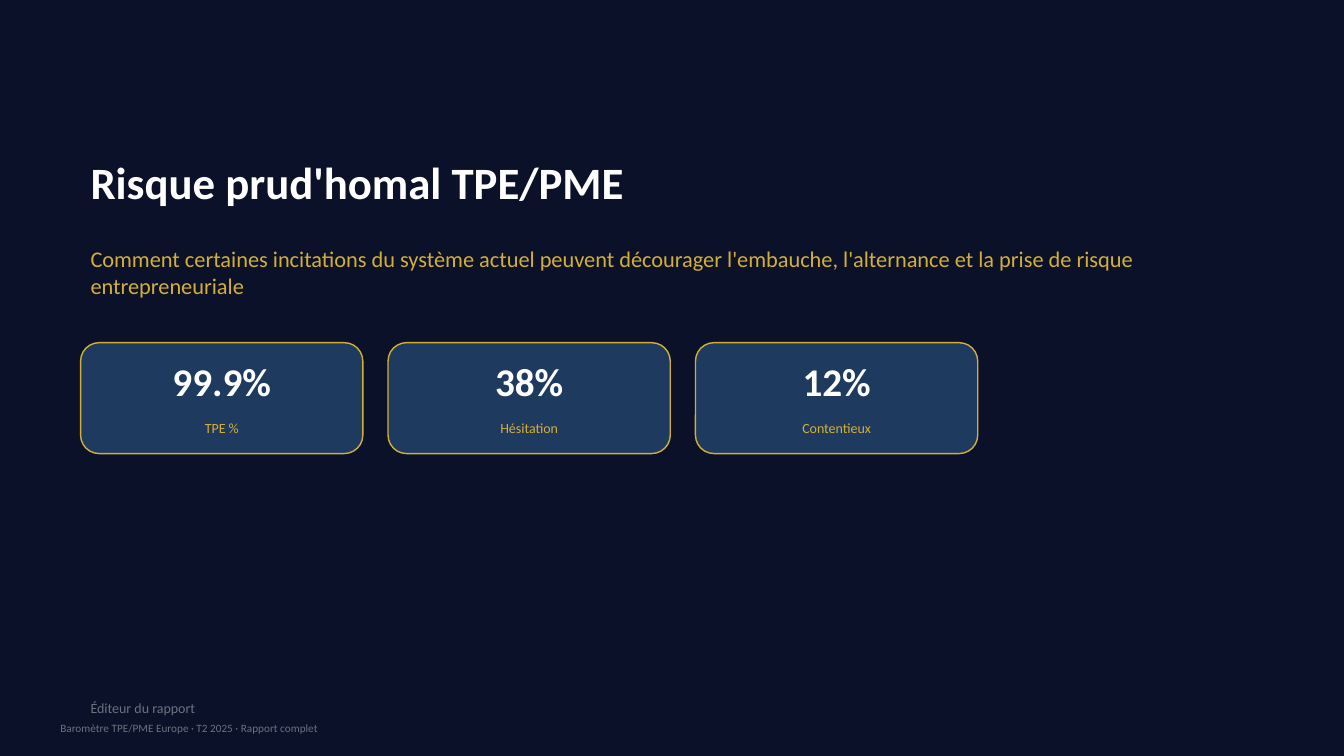
from dataclasses import dataclass

from pptx import Presentation
from pptx import util as u
from pptx.dml.color import RGBColor
from pptx.enum import shapes, text


@dataclass(frozen=True)
class Theme:
    font: str = "Calibri"
    background: str = "0A1128"
    card: str = "1E3A5F"
    gold: str = "D4AF37"
    white: str = "FFFFFF"
    grey: str = "6B7280"
    title: int = 32
    figure: int = 28
    subtitle: int = 16
    label: int = 10
    footer: int = 8


def set_attributes(target, values):
    for name, value in values.items():
        setattr(target, name, value)


class SlideBuilder:
    def __init__(self, presentation, theme):
        self.theme = theme
        self.slide = presentation.slides.add_slide(presentation.slide_layouts[6])
        fill = self.slide.background.fill
        fill.solid()
        fill.fore_color.rgb = RGBColor.from_string(theme.background)

    def add_text(self, box, words, size, color, bold=False, align=text.PP_ALIGN.LEFT):
        frame = self.slide.shapes.add_textbox(*map(u.Pt, box)).text_frame
        set_attributes(frame, {"word_wrap": True, "vertical_anchor": text.MSO_ANCHOR.MIDDLE})
        paragraph = frame.paragraphs[0]
        paragraph.alignment = align
        run = paragraph.add_run()
        run.text = words
        set_attributes(run.font, {"name": self.theme.font, "size": u.Pt(size), "bold": bold})
        run.font.color.rgb = RGBColor.from_string(color)

    def add_panel(self, box):
        shape = self.slide.shapes.add_shape(
            shapes.MSO_SHAPE.ROUNDED_RECTANGLE, *map(u.Pt, box)
        )
        shape.shadow.inherit = False
        shape.fill.solid()
        shape.fill.fore_color.rgb = RGBColor.from_string(self.theme.card)
        shape.line.color.rgb = RGBColor.from_string(self.theme.gold)
        shape.line.width = u.Pt(1)

    def add_card(self, left, top, width, figure, label):
        theme, center = self.theme, text.PP_ALIGN.CENTER
        self.add_panel((left, top, width, 79.2))
        self.add_text((left, top + 7.2, width, 39.6), figure, theme.figure, theme.white, True, center)
        self.add_text((left, top + 46.8, width, 28.8), label, theme.label, theme.gold, align=center)


def main():
    presentation = Presentation()
    set_attributes(presentation, {"slide_width": u.Pt(960), "slide_height": u.Pt(540)})
    theme = Theme()
    builder = SlideBuilder(presentation, theme)
    margin, content_width = 57.6, 828

    builder.add_text(
        (margin, 86.4, content_width, 86.4),
        "Risque prud'homal TPE/PME", theme.title, theme.white, bold=True,
    )
    builder.add_text(
        (margin, 172.8, content_width, 43.2),
        "Comment certaines incitations du système actuel peuvent décourager "
        "l'embauche, l'alternance et la prise de risque entrepreneuriale",
        theme.subtitle, theme.gold,
    )

    card_width, card_gap = 201.6, 18
    indicators = [("99.9%", "TPE %"), ("38%", "Hésitation"), ("12%", "Contentieux")]
    for index, (figure, label) in enumerate(indicators):
        left = margin + index * (card_width + card_gap)
        builder.add_card(left, 244.8, card_width, figure, label)

    builder.add_text((margin, 493.2, 360, 25.2), "Éditeur du rapport", theme.label, theme.grey)
    builder.add_text(
        (36, 507.6, 885.6, 25.2),
        "Baromètre TPE/PME Europe · T2 2025 · Rapport complet", theme.footer, theme.grey,
    )
    presentation.save("out.pptx")


if __name__ == "__main__":
    main()
